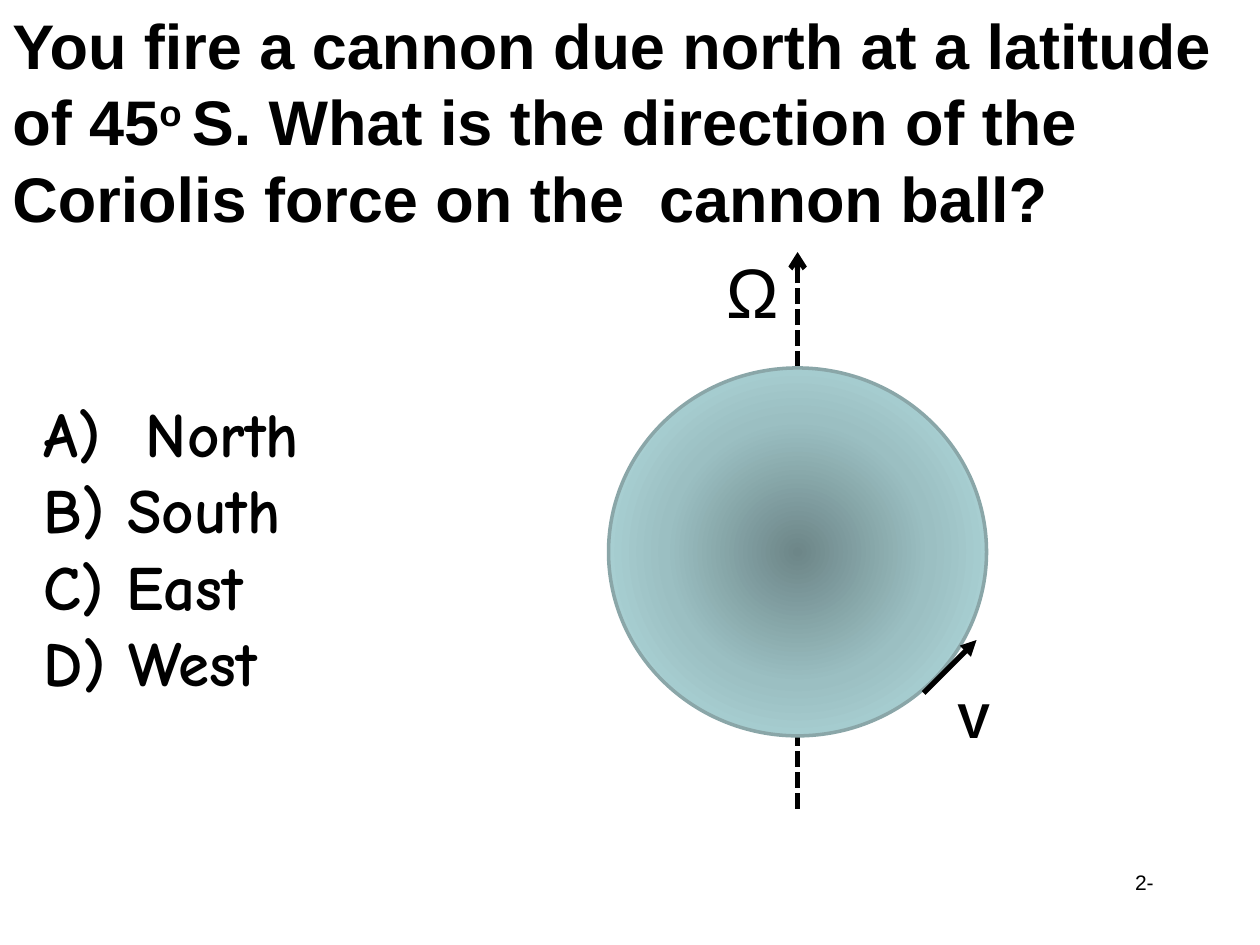
from lxml import etree
from pptx import Presentation
from pptx.dml.color import RGBColor
from pptx.enum.dml import MSO_LINE_DASH_STYLE as Dash
from pptx.enum.shapes import MSO_CONNECTOR_TYPE as Connector, MSO_SHAPE as Shape
from pptx.oxml import parse_xml
from pptx.oxml.ns import nsdecls, qn
from pptx.util import Inches, Pt

BLACK = "000000"
QUESTION = [
    "You fire a cannon due north at a latitude of 45",
    "o ",
    "S. What is the direction of the Coriolis force on the  cannon ball?",
]
ANSWERS = ["A)  North", "B) South", "C) East", "D) West"]
GLOBE_STOPS = [(0, "6D8688"), (50, "9BBFC2"), (100, "B8E3E6")]


def color(value):
    """Return the colour of a hex string."""
    return RGBColor.from_string(value)


def add_text(slide, box, lines, size, font="Arial", bold=False, pitch=None):
    """Place lines of text, each a list of runs, in a box."""
    shape = slide.shapes.add_textbox(*(Inches(length) for length in box))
    text_frame = shape.text_frame
    text_frame.word_wrap = True
    for index, texts in enumerate(lines):
        paragraph = text_frame.paragraphs[0] if index == 0 else text_frame.add_paragraph()
        if pitch:
            paragraph.line_spacing = Pt(pitch)
        for text in texts:
            run = paragraph.add_run()
            run.text = text
            run.font.name = font
            run.font.size = Pt(size)
            run.font.bold = bold
            run.font.color.rgb = color(BLACK)
    return shape


def add_arrow(slide, start, end, head, dash=None):
    """Draw a straight black arrow from start to end."""
    points = (Inches(length) for length in (*start, *end))
    arrow = slide.shapes.add_connector(Connector.STRAIGHT, *points)
    arrow.line.color.rgb = color(BLACK)
    arrow.line.width = Pt(3)
    if dash:
        arrow.line.dash_style = dash
    etree.SubElement(arrow.line._get_or_add_ln(), qn("a:tailEnd"), type=head)
    etree.SubElement(arrow._element.spPr, qn("a:effectLst"))


def add_question(slide, box):
    """Write the question with its raised degree sign."""
    shape = add_text(slide, box, [QUESTION], 36, bold=True, pitch=43.5)
    degree = shape.text_frame.paragraphs[0].runs[1]
    degree.font._element.set("baseline", "30000")


def add_answers(slide, box):
    """List the four possible answers."""
    lines = [[answer] for answer in ANSWERS]
    add_text(slide, box, lines, 36, "Comic Neue", bold=True, pitch=43.5)


def add_globe(slide, box):
    """Draw the globe with a radial gradient."""
    globe = slide.shapes.add_shape(Shape.OVAL, *(Inches(length) for length in box))
    globe.shadow.inherit = False
    globe.line.color.rgb = color("8AA6A8")
    globe.line.width = Pt(2)
    stops = "".join(
        f'<a:gs pos="{position * 1000}"><a:srgbClr val="{value}"/></a:gs>'
        for position, value in GLOBE_STOPS
    )
    gradient = parse_xml(
        f'<a:gradFill {nsdecls("a")} rotWithShape="1"><a:gsLst>{stops}</a:gsLst>'
        '<a:path path="circle"><a:fillToRect l="50000" t="50000" r="50000" b="50000"/>'
        "</a:path></a:gradFill>"
    )
    globe._element.spPr.find(qn("a:prstGeom")).addnext(gradient)


def add_diagram(slide, box):
    """Draw the spinning globe, its axis and the velocity arrow."""
    left, top, width, height = box
    axis = left + width / 2
    add_arrow(slide, (axis, top + 3.5), (axis, top - 0.92), "arrow", Dash.SQUARE_DOT)
    add_globe(slide, (left, top, width, height))
    add_arrow(slide, (left + 2.5, top + 2.58), (left + 2.92, top + 2.16), "triangle")
    add_text(slide, (left + 2.67, top + 2.5, 0.75, 0.57), [["V"]], 28, bold=True)
    add_text(slide, (left + 0.84, top - 1, 1, 0.77), [["Ω"]], 40)


def main():
    """Build the slide and save it."""
    presentation = Presentation()
    presentation.slide_width = Inches(10)
    presentation.slide_height = Inches(7.5)
    slide = presentation.slides.add_slide(presentation.slide_layouts[6])
    add_text(slide, (8.91, 6.85, 0.48, 0.3), [["2-"]], 12)
    add_question(slide, (0, 0, 9.83, 1.92))
    add_diagram(slide, (4.83, 2.92, 3, 2.92))
    add_answers(slide, (0.25, 3.08, 5, 2.52))
    presentation.save("out.pptx")


if __name__ == "__main__":
    main()
